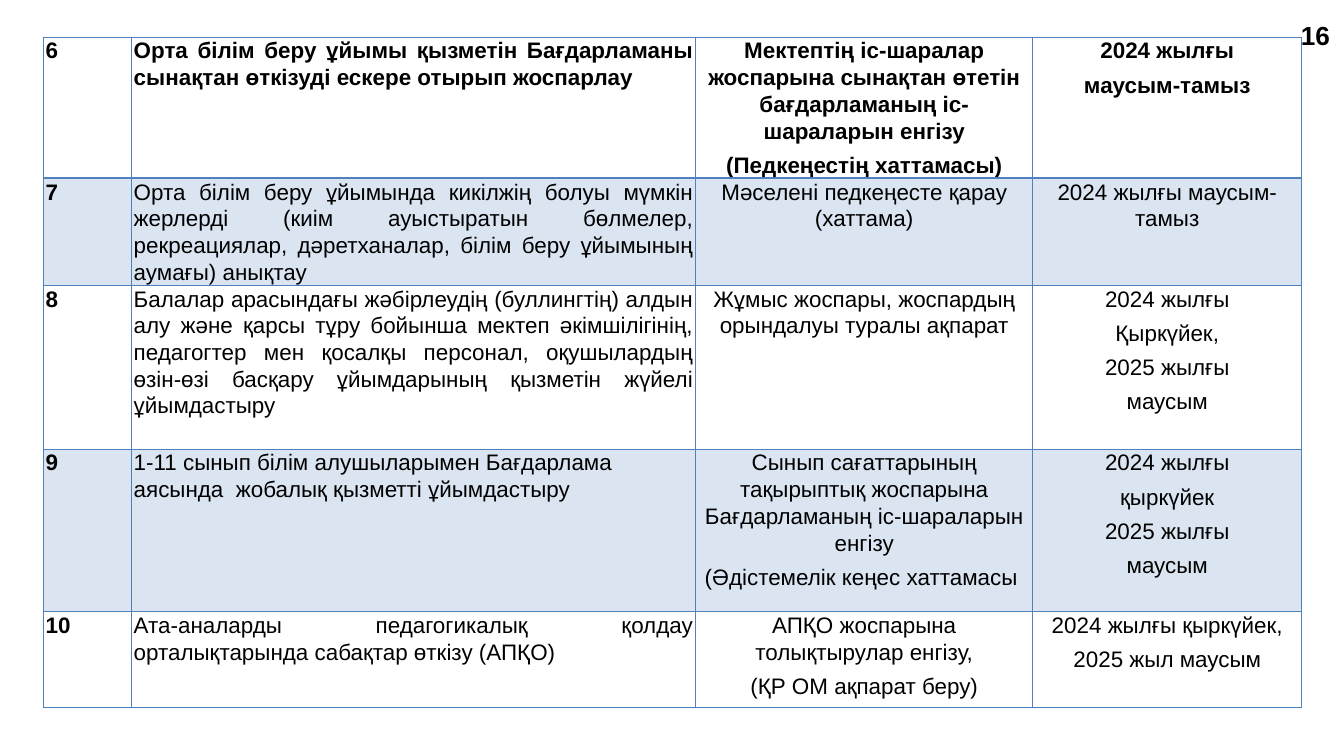
from lxml import etree
from pptx import Presentation, util as u
from pptx.dml.color import RGBColor
from pptx.enum import text
from pptx.oxml.ns import qn

COLORS = {"text": "000000", "accent": "4F81BD"}
ALIGN = text.PP_ALIGN
COLS = [6.55, 42, 25.1, 20]
PLAN = [
    (18.67, "6", ["Орта білім беру ұйымы қызметін Бағдарламаны сынақтан өткізуді ескере отырып жоспарлау"],
     ["Мектептің іс-шаралар жоспарына сынақтан өтетін бағдарламаның іс-шараларын енгізу",
      "(Педкеңестің хаттамасы)"],
     ["2024 жылғы", "маусым-тамыз"]),
    (14.13, "7", ["Орта білім беру ұйымында кикілжің болуы мүмкін жерлерді (киім ауыстыратын бөлмелер, "
                  "рекреациялар, дәретханалар, білім беру ұйымының аумағы) анықтау"],
     ["Мәселені педкеңесте қарау (хаттама)"],
     ["2024 жылғы маусым-тамыз"]),
    (21.69, "8", ["Балалар арасындағы жәбірлеудің (буллингтің) алдын алу және қарсы тұру бойынша мектеп "
                  "әкімшілігінің, педагогтер мен қосалқы персонал, оқушылардың өзін-өзі басқару "
                  "ұйымдарының қызметін жүйелі ұйымдастыру"],
     ["Жұмыс жоспары, жоспардың орындалуы туралы ақпарат"],
     ["2024 жылғы", "Қыркүйек,", "2025 жылғы", "маусым"]),
    (21.51, "9", ["1-11 сынып білім алушыларымен Бағдарлама аясында  жобалық қызметті ұйымдастыру"],
     ["Сынып сағаттарының тақырыптық жоспарына Бағдарламаның іс-шараларын енгізу",
      "(Әдістемелік кеңес хаттамасы "],
     ["2024 жылғы", "қыркүйек", "2025 жылғы", "маусым"]),
    (12.71, "10", ["Ата-аналарды педагогикалық қолдау орталықтарында сабақтар өткізу (АПҚО)"],
     ["АПҚО жоспарына толықтырулар енгізу,", "(ҚР ОМ ақпарат беру)"],
     ["2024 жылғы қыркүйек,", "2025 жыл маусым"]),
]


def add_run(p, words, size, bold):
    r = p.add_run()
    r.text = words
    r.font.name = "Arial"
    r.font.size = u.Pt(size)
    r.font.bold = bold
    r.font.color.rgb = RGBColor.from_string(COLORS["text"])


def add_border(cell, side, width):
    ln = etree.SubElement(cell._tc.get_or_add_tcPr(), qn(f"a:ln{side}"), w=str(u.Pt(width)))
    fill = etree.SubElement(ln, qn("a:solidFill"))
    etree.SubElement(fill, qn("a:srgbClr"), val=COLORS["accent"])


prs = Presentation()
prs.slide_width, prs.slide_height = u.Inches(20), u.Inches(11.25)
col_unit, row_unit = prs.slide_width / 100, prs.slide_height / 100
s = prs.slides.add_slide(prs.slide_layouts[6])

table = s.shapes.add_table(
    len(PLAN), len(COLS), int(3.2 * col_unit), int(4.89 * row_unit),
    int(sum(COLS) * col_unit), int(sum(row[0] for row in PLAN) * row_unit)).table
table.first_row = False
table.horz_banding = False
for column, share in zip(table.columns, COLS):
    column.width = int(share * col_unit)

for i, (share, number, *columns) in enumerate(PLAN):
    table.rows[i].height = int(share * row_unit)
    for j, lines in enumerate([[number], *columns]):
        cell = table.cell(i, j)
        cell.margin_left = cell.margin_right = u.Inches(0.04)
        cell.margin_top = cell.margin_bottom = 0
        for side in "LRTB":
            thick = (i, side) in [(0, "B"), (1, "T")]
            add_border(cell, side, 2 if thick else 1)
        if i % 2:
            cell.fill.solid()
            cell.fill.fore_color.rgb = RGBColor.from_string(COLORS["accent"])
            tint = cell._tc.tcPr.find(qn("a:solidFill"))[0]
            etree.SubElement(tint, qn("a:alpha"), val="20000")
        else:
            cell.fill.background()
        tf = cell.text_frame
        for k, line in enumerate(lines):
            p = tf.add_paragraph() if k else tf.paragraphs[0]
            p.alignment = ALIGN.CENTER if j > 1 else ALIGN.JUSTIFY
            if number == "9" and j == 1:
                p.alignment = ALIGN.LEFT
            p.line_spacing = 1.07
            p.space_after = u.Pt(8)
            add_run(p, line, 24, i == 0 or j == 0)

sp = s.shapes.add_textbox(int(96.3 * col_unit), int(2.13 * row_unit),
                          int(3.5 * col_unit), int(5.07 * row_unit))
tf = sp.text_frame
tf.word_wrap = True
tf.auto_size = text.MSO_AUTO_SIZE.SHAPE_TO_FIT_TEXT
add_run(tf.paragraphs[0], "16", 28, True)

prs.save("out.pptx")
